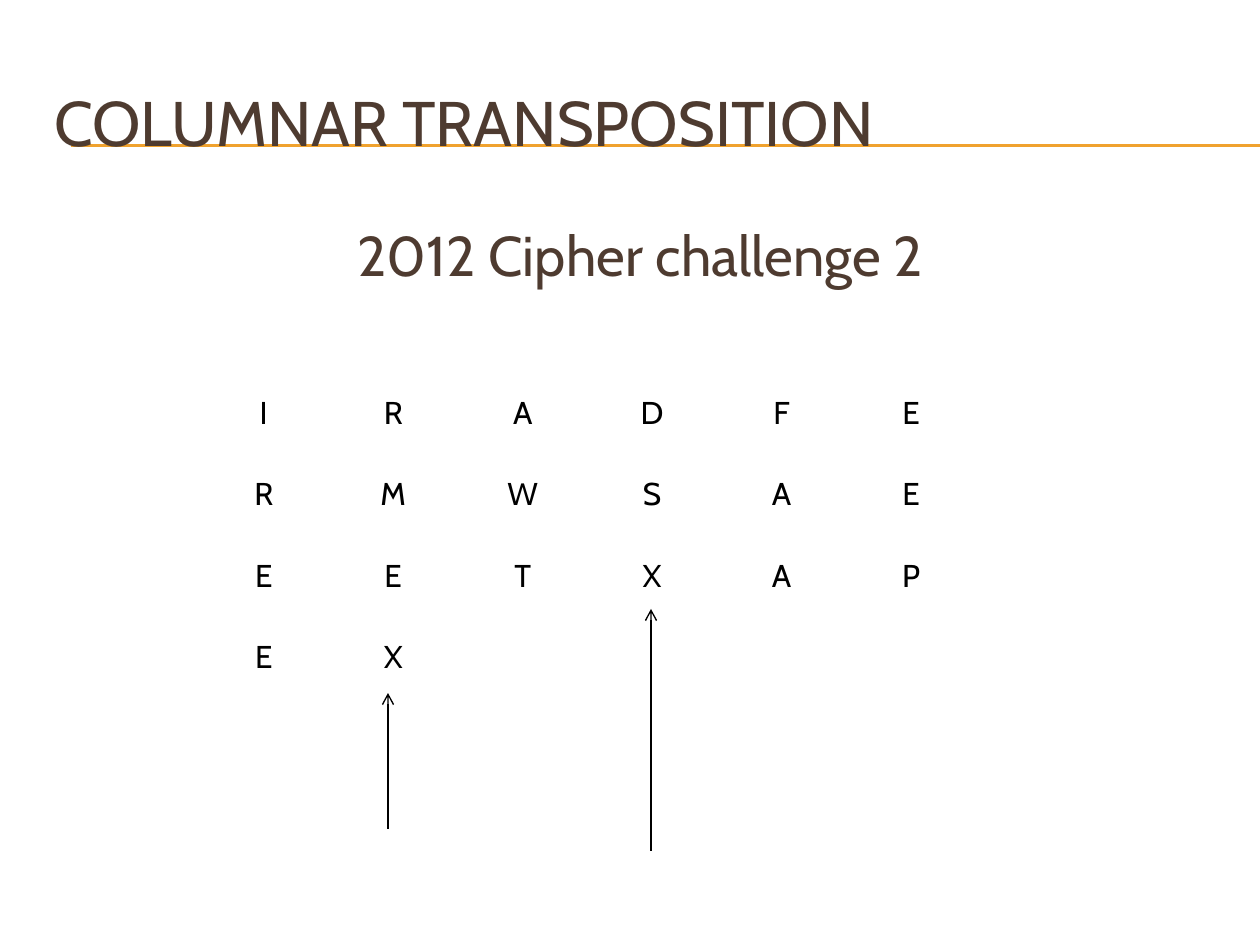
from lxml.etree import SubElement
from pptx import Presentation
from pptx.dml.color import RGBColor
from pptx.enum.shapes import MSO_CONNECTOR
from pptx.enum.text import MSO_ANCHOR, PP_ALIGN
from pptx.oxml.ns import qn
from pptx.util import Emu, Pt

EMU_PER_PX = 914400 / 126
FONT = "Cabin"
BROWN = RGBColor(0x4E, 0x3B, 0x30)
ORANGE = RGBColor(0xF0, 0xA2, 0x2E)
BLACK = RGBColor(0, 0, 0)
CIPHER_ROWS = ["IRADFE", "RMWSAE", "EETXAP", "EX"]


def px(value):
    return Emu(round(value * EMU_PER_PX))


def format_paragraph(p, size, color, align):
    p.alignment = align
    for r in p.runs:
        r.font.name = FONT
        r.font.size = Pt(size)
        r.font.bold = False
        r.font.color.rgb = color


def add_text(s, text, box, size, align, anchor):
    sp = s.shapes.add_textbox(*map(px, box))
    tf = sp.text_frame
    tf.word_wrap = True
    tf.vertical_anchor = anchor
    tf.text = text
    format_paragraph(tf.paragraphs[0], size, BROWN, align)


def add_line(s, start, end, color, width, arrow=False):
    line = s.shapes.add_connector(
        MSO_CONNECTOR.STRAIGHT, *map(px, (*start, *end)))
    line.line.color.rgb = color
    line.line.width = Pt(width)
    if arrow:
        SubElement(line.line._get_or_add_ln(), qn("a:tailEnd"), type="arrow")
    SubElement(line._element.spPr, qn("a:effectLst"))


def add_letter_grid(s, rows, box):
    columns = max(map(len, rows))
    table = s.shapes.add_table(len(rows), columns, *map(px, box)).table
    table.horz_banding = False
    for i, letters in enumerate(rows):
        for j in range(columns):
            cell = table.cell(i, j)
            cell.fill.background()
            cell.text = letters[j:j + 1]
            format_paragraph(
                cell.text_frame.paragraphs[0], 18, BLACK, PP_ALIGN.CENTER)


def main():
    prs = Presentation()
    prs.slide_width, prs.slide_height = px(1260), px(945)
    s = prs.slides.add_slide(prs.slide_layouts[6])
    for y in (145, 146):
        add_line(s, (71, y), (1260, y), ORANGE, 0.75)
    add_text(s, "COLUMNAR TRANSPOSITION", (42, 63, 1197, 116), 36,
             PP_ALIGN.LEFT, MSO_ANCHOR.MIDDLE)
    add_text(s, "2012 Cipher challenge 2", (42, 214, 1197, 624), 32,
             PP_ALIGN.CENTER, MSO_ANCHOR.TOP)
    add_letter_grid(s, CIPHER_ROWS, (199, 388, 777, 325))
    for x, bottom, top in ((651, 851, 609), (388, 829, 693)):
        add_line(s, (x, bottom), (x, top), BLACK, 0.79, arrow=True)
    prs.save("out.pptx")


if __name__ == "__main__":
    main()
